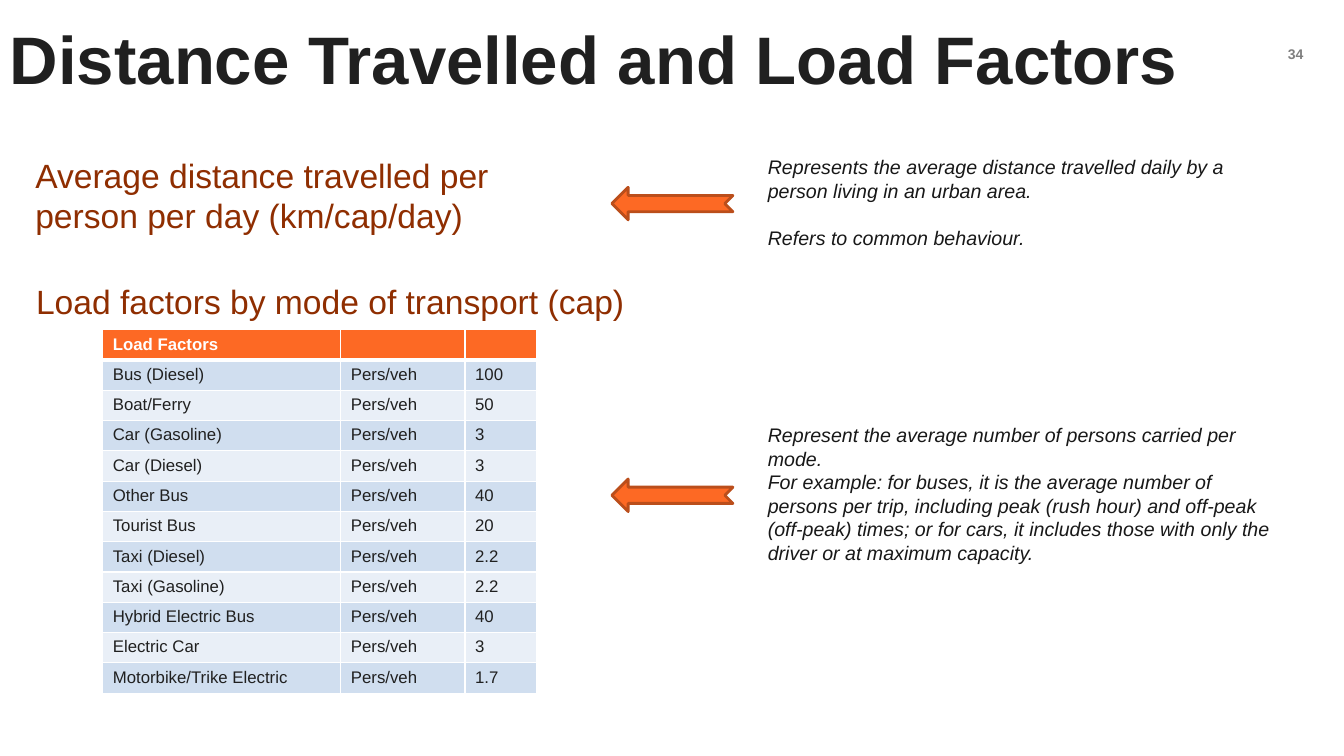
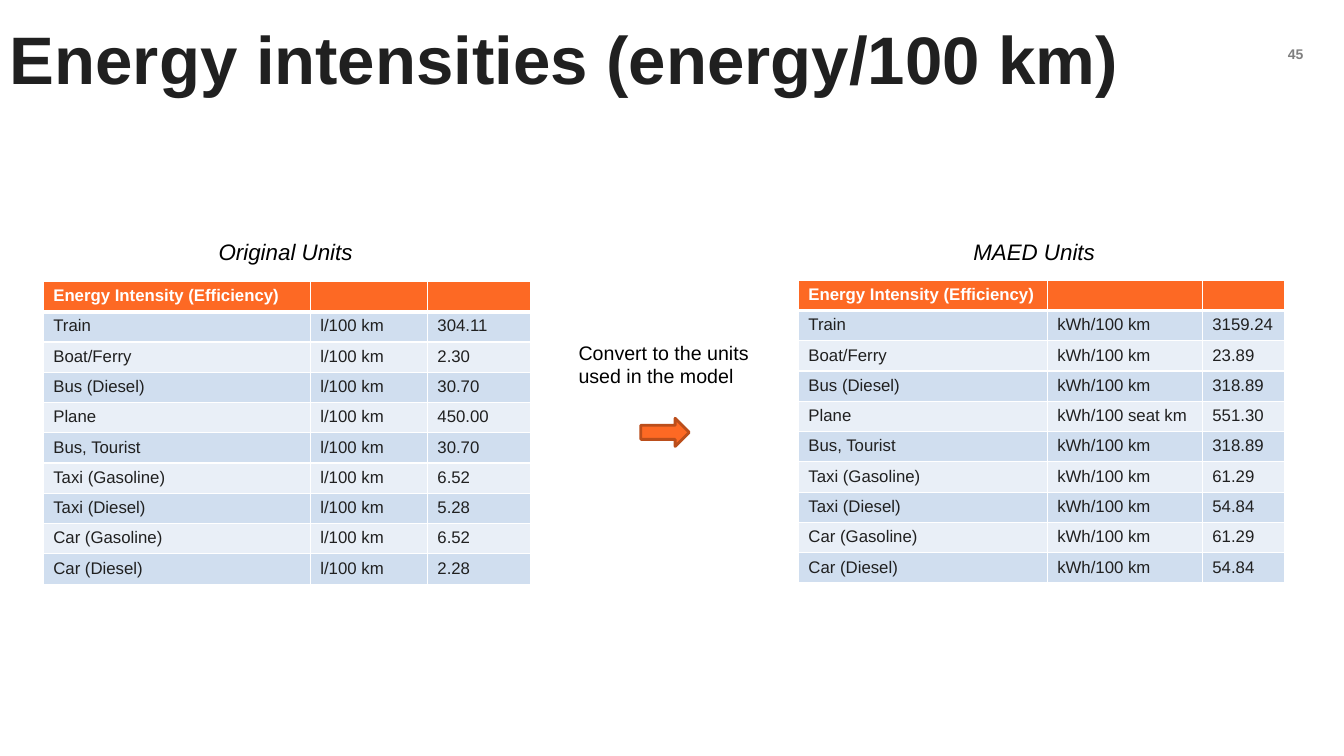
import lxml.etree
import pptx
import pptx.dml.color
import pptx.enum.shapes
import pptx.enum.text
import pptx.oxml.ns
import pptx.util

Cm = pptx.util.Cm
Pt = pptx.util.Pt
qn = pptx.oxml.ns.qn
SHAPE = pptx.enum.shapes.MSO_SHAPE

COLORS = {
    "title": "202020",
    "number": "7F7F7F",
    "heading": "8F2E01",
    "note": "181818",
    "black": "000000",
    "white": "FFFFFF",
    "orange": "FD6924",
    "outline": "BB4E1B",
    "band_dark": "D0DEEF",
    "band_light": "E9EFF7",
}
RGB = {name: pptx.dml.color.RGBColor.from_string(c) for name, c in COLORS.items()}
FONT = "Arial"
ROW_HEIGHT = 0.76


def style_font(font, size, color, bold=False, italic=False):
    font.name = FONT
    font.size = Pt(size)
    font.bold = bold
    font.italic = italic
    font.color.rgb = RGB[color]


def add_text(s, box, text, size, color, bold=False, italic=False):
    tf = s.shapes.add_textbox(*map(Cm, box)).text_frame
    tf.word_wrap = True
    tf.text = text
    for p in tf.paragraphs:
        for r in p.runs:
            style_font(r.font, size, color, bold, italic)
    return tf


prs = pptx.Presentation()
prs.slide_width = Cm(33.87)
prs.slide_height = Cm(19.05)

slides = []
for title, number in [
    ("Distance Travelled and Load Factors", "34"),
    ("Energy intensities (energy/100 km)", "45"),
]:
    s = prs.slides.add_slide(prs.slide_layouts[6])
    tf = add_text(s, (32.05, 1.02, 1.2, 1.02), number, 10, "number", bold=True)
    tf.paragraphs[0].alignment = pptx.enum.text.PP_ALIGN.CENTER
    tf = add_text(s, (0, 0, 32, 3.15), title, 48, "title", bold=True)
    tf.vertical_anchor = pptx.enum.text.MSO_ANCHOR.MIDDLE
    tf.paragraphs[0].line_spacing = 0.9
    slides.append(s)
factors, intensities = slides

add_text(factors, (0.64, 3.78, 13.8, 2.46),
         "Average distance travelled per person per day (km/cap/day)", 24, "heading")
add_text(factors, (0.66, 6.96, 18.16, 1.27),
         "Load factors by mode of transport (cap)", 24, "heading")
tf = add_text(factors, (19.1, 3.78, 13.49, 2.72),
              "Represents the average distance travelled daily by a person living "
              "in an urban area.\nRefers to common behaviour.", 14, "note", italic=True)
tf.paragraphs[1].space_before = Pt(17)
add_text(factors, (19.1, 10.54, 13.49, 3.84),
         "Represent the average number of persons carried per mode.\n"
         "For example: for buses, it is the average number of persons per trip, "
         "including peak (rush hour) and off-peak (off-peak) times; or for cars, "
         "it includes those with only the driver or at maximum capacity.",
         14, "note", italic=True)

add_text(intensities, (14.33, 8.46, 4.83, 1.45),
         "Convert to the units used in the model", 14, "black")
for left, caption in [(5.26, "Original Units"), (24.28, "MAED Units")]:
    add_text(intensities, (left, 5.87, 3.96, 0.94), caption, 16, "black", italic=True)

for s, kind, box, rotation in [
    (factors, SHAPE.NOTCHED_RIGHT_ARROW, (15.42, 4.72, 3.05, 0.82), 180),
    (factors, SHAPE.NOTCHED_RIGHT_ARROW, (15.42, 12.07, 3.05, 0.82), 180),
    (intensities, SHAPE.RIGHT_ARROW, (16.15, 10.54, 1.22, 0.71), 0),
]:
    arrow = s.shapes.add_shape(kind, *map(Cm, box))
    arrow.rotation = rotation
    arrow.shadow.inherit = False
    arrow.fill.solid()
    arrow.fill.fore_color.rgb = RGB["orange"]
    arrow.line.color.rgb = RGB["outline"]
    arrow.line.width = Pt(2)

load_factors = [
    ("Bus (Diesel)", "100"),
    ("Boat/Ferry", "50"),
    ("Car (Gasoline)", "3"),
    ("Car (Diesel)", "3"),
    ("Other Bus", "40"),
    ("Tourist Bus", "20"),
    ("Taxi (Diesel)", "2.2"),
    ("Taxi (Gasoline)", "2.2"),
    ("Hybrid Electric Bus", "40"),
    ("Electric Car", "3"),
    ("Motorbike/Trike Electric", "1.7"),
]
energy = [
    ("Train", "304.11", "kWh/100 km", "3159.24"),
    ("Boat/Ferry", "2.30", "kWh/100 km", "23.89"),
    ("Bus (Diesel)", "30.70", "kWh/100 km", "318.89"),
    ("Plane", "450.00", "kWh/100 seat km", "551.30"),
    ("Bus, Tourist", "30.70", "kWh/100 km", "318.89"),
    ("Taxi (Gasoline)", "6.52", "kWh/100 km", "61.29"),
    ("Taxi (Diesel)", "5.28", "kWh/100 km", "54.84"),
    ("Car (Gasoline)", "6.52", "kWh/100 km", "61.29"),
    ("Car (Diesel)", "2.28", "kWh/100 km", "54.84"),
]

for s, left, top, widths, header, body in [
    (factors, 2.59, 8.31, (6, 3.13, 1.8), "Load Factors",
     [(mode, "Pers/veh", value) for mode, value in load_factors]),
    (intensities, 1.09, 7.09, (6.73, 2.95, 2.59), "Energy Intensity (Efficiency)",
     [(mode, "l/100 km", litres) for mode, litres, unit, kwh in energy]),
    (intensities, 20.12, 7.06, (6.27, 3.91, 2.08), "Energy Intensity (Efficiency)",
     [(mode, unit, kwh) for mode, litres, unit, kwh in energy]),
]:
    rows = [(header, "", "")] + body
    table = s.shapes.add_table(len(rows), 3, Cm(left), Cm(top), Cm(sum(widths)),
                               Cm(ROW_HEIGHT * len(rows))).table
    for column, width in zip(table.columns, widths):
        column.width = Cm(width)
    for i, row in enumerate(rows):
        table.rows[i].height = Cm(ROW_HEIGHT)
        if i == 0:
            fill, color = "orange", "white"
        else:
            fill, color = ("band_dark" if i % 2 else "band_light"), "title"
        for j, text in enumerate(row):
            cell = table.cell(i, j)
            p = cell.text_frame.paragraphs[0]
            if text:
                p.text = text
                style_font(p.runs[0].font, 12, color, bold=i == 0)
            else:
                lxml.etree.SubElement(p._p, qn("a:endParaRPr"), sz="1200")
            tcPr = cell._tc.get_or_add_tcPr()
            for side in ("lnL", "lnR", "lnT", "lnB"):
                thick = (i, side) in ((0, "lnB"), (1, "lnT"))
                ln = lxml.etree.SubElement(tcPr, qn("a:" + side),
                                           w=str(Pt(3 if thick else 1)))
                solid = lxml.etree.SubElement(ln, qn("a:solidFill"))
                lxml.etree.SubElement(solid, qn("a:srgbClr"), val=COLORS["white"])
            cell.fill.solid()
            cell.fill.fore_color.rgb = RGB[fill]

prs.save("out.pptx")
